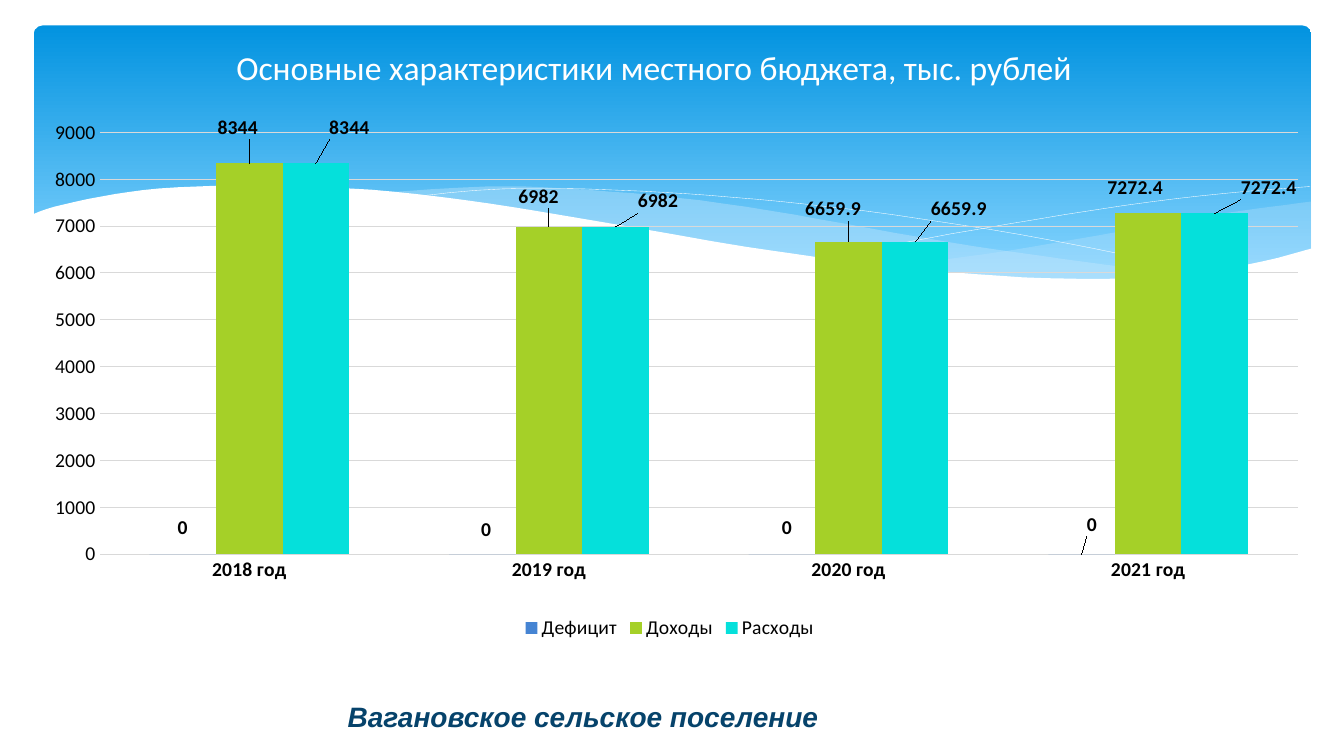
from lxml import etree
from pptx import Presentation
from pptx.chart.data import CategoryChartData
from pptx.dml.color import RGBColor
from pptx.enum.chart import XL_CHART_TYPE, XL_LABEL_POSITION, XL_LEGEND_POSITION, XL_TICK_MARK
from pptx.enum.shapes import MSO_SHAPE
from pptx.enum.text import MSO_ANCHOR, MSO_AUTO_SIZE, PP_ALIGN
from pptx.oxml.ns import qn
from pptx.util import Cm, Pt

COLUMN = XL_CHART_TYPE.COLUMN_CLUSTERED
OUTSIDE = XL_LABEL_POSITION.OUTSIDE_END
BOTTOM = XL_LEGEND_POSITION.BOTTOM
NO_TICK = XL_TICK_MARK.NONE
ROUNDED = MSO_SHAPE.ROUNDED_RECTANGLE
MIDDLE, TOP = MSO_ANCHOR.MIDDLE, MSO_ANCHOR.TOP
FIXED = MSO_AUTO_SIZE.NONE
CENTER, LEFT = PP_ALIGN.CENTER, PP_ALIGN.LEFT

COLORS = {
    "sky": "0293E0", "pale": "83D3FE", "mist": "C6E7FC", "white": "FFFFFF",
    "black": "000000", "navy": "06436B", "grid": "D9D9D9",
    "blue": "4584D3", "green": "A5D028", "cyan": "05E0DB",
}
YEARS = ["2018 год", "2019 год", "2020 год", "2021 год"]
FLOWS = [8344, 6982, 6659.9, 7272.4]
SERIES = [
    ("Дефицит", "blue", [0, 0, 0, 0], [(0, -1.8), (0.3, -1.5), (0.4, -1.8), (0.8, -2.5)]),
    ("Доходы", "green", FLOWS, [(-0.9, -3.5), (-0.8, -2.6), (-1.2, -3.1), (-1, -1.8)]),
    ("Расходы", "cyan", FLOWS, [(2.6, -3.5), (3.3, -1.8), (3.4, -3.1), (4.2, -1.8)]),
]

RIGHT_TOP = [(3304, 508), (3165, 526), (3018, 549), (2819, 584), (2553, 630), (2240, 673)]
RIGHT_LOW = [(2240, 673), (2433, 691), (2644, 704), (2827, 704), (3012, 691),
             (3167, 665), (3304, 627)]
MID_TOP = [(3023, 693), (2835, 673), (2626, 645), (2390, 610), (2131, 564),
           (1880, 521), (1656, 493), (1422, 475), (1224, 470), (970, 485)]
MID_LOW = [(970, 485), (1227, 516), (1521, 564), (1793, 610), (2037, 648),
           (2304, 681), (2535, 701), (2769, 706), (3023, 693)]
FALL = [(1046, 495), (1163, 483), (1311, 475), (1524, 478), (1727, 488),
        (1969, 508), (2250, 541), (2576, 592), (2814, 638), (3073, 691)]
RISE = [(2078, 653), (2276, 612), (2532, 566), (2832, 518), (3081, 488), (3302, 470)]
FRONT = [(3310, 625), (3185, 658), (3043, 683), (2835, 701), (2634, 701), (2398, 686),
         (2118, 655), (1880, 622), (1514, 559), (1234, 513), (991, 483), (777, 470),
         (597, 467), (401, 475), (257, 495), (137, 521), (79, 541)]
BASE = [(79, 836), (3310, 836)]


def rgb(name):
    """Return the named colour."""
    return RGBColor.from_string(COLORS[name])


def style(font, size=14, color="black", face="Calibri", bold=False, italic=False):
    """Format a font."""
    font.size, font.name, font.bold, font.italic = Pt(size), face, bold, italic
    font.color.rgb = rgb(color)


def write(frame, text, align=LEFT, anchor=TOP, wrap=True, **form):
    """Put formatted text in a frame."""
    frame.word_wrap, frame.vertical_anchor = wrap, anchor
    frame.auto_size = FIXED
    para = frame.paragraphs[0]
    para.alignment = align
    run = para.add_run()
    run.text = text
    style(run.font, **form)


def smooth(knots, steps=4):
    """Return points on a smooth curve through the knots."""
    ends = [knots[0], *knots, knots[-1]]
    curve = [knots[0]]
    for a, b, c, d in zip(ends, ends[1:], ends[2:], ends[3:]):
        for step in range(1, steps + 1):
            t = step / steps
            curve.append(tuple(
                (2 * q + (r - p) * t + (2 * p - 5 * q + 4 * r - s) * t ** 2
                 + (3 * q - p - 3 * r + s) * t ** 3) / 2
                for p, q, r, s in zip(a, b, c, d)))
    return curve


def wave(slide, points, fill=None, alpha=100):
    """Draw a filled wave, or a thin white line when no fill is given."""
    pen = slide.shapes.build_freeform(*points[0], scale=Cm(0.01))
    pen.add_line_segments(points[1:], close=bool(fill))
    shape = pen.convert_to_shape()
    shape.shadow.inherit = False
    if fill:
        shape.fill.solid()
        shape.fill.fore_color.rgb = rgb(fill)
        shape.line.fill.background()
        tint = shape.element.spPr.find(".//" + qn("a:srgbClr"))
        etree.SubElement(tint, qn("a:alpha"), val=str(alpha * 1000))
    else:
        shape.fill.background()
        shape.line.color.rgb = rgb("white")
        shape.line.width = Pt(0.25)


def banner(slide, box):
    """Draw the blue banner and its waves."""
    band = slide.shapes.add_shape(ROUNDED, *box)
    band.adjustments[0] = 0.034
    band.shadow.inherit = False
    band.line.fill.background()
    band.fill.gradient()
    band.fill.gradient_angle = 270
    for stop, name, spot in zip(band.fill.gradient_stops, ("sky", "pale"), (0, 0.9)):
        stop.color.rgb, stop.position = rgb(name), spot
    wave(slide, smooth(RIGHT_TOP) + smooth(RIGHT_LOW), "mist", 29)
    wave(slide, smooth(MID_TOP) + smooth(MID_LOW), "mist", 40)
    wave(slide, smooth(FALL))
    wave(slide, smooth(RISE))
    wave(slide, smooth(FRONT) + BASE, "white")


def heading(slide, box, text):
    """Place the title above the banner."""
    title = slide.shapes.title
    title.left, title.top, title.width, title.height = box
    write(title.text_frame, text, CENTER, MIDDLE, size=24, color="white")
    title.element.getparent().append(title.element)


def place(parent, index, **parts):
    """Insert a manual chart layout."""
    layout = etree.Element(qn("c:layout"))
    manual = etree.SubElement(layout, qn("c:manualLayout"))
    for name, value in parts.items():
        etree.SubElement(manual, qn("c:" + name), val=str(value))
    parent.insert(index, layout)


def budget(slide, box):
    """Draw the budget column chart."""
    data = CategoryChartData()
    data.categories = YEARS
    for name, _, values, _ in SERIES:
        data.add_series(name, values)
    chart = slide.shapes.add_chart(COLUMN, *box, data).chart
    style(chart.font)
    chart.has_title = False
    chart.has_legend = True
    chart.legend.position = BOTTOM
    chart.legend.include_in_layout = False
    style(chart.legend.font)
    for axis, bold in ((chart.category_axis, True), (chart.value_axis, False)):
        style(axis.tick_labels.font, bold=bold)
        axis.major_tick_mark = axis.minor_tick_mark = NO_TICK
        axis.format.line.fill.background()
    scale = chart.value_axis
    scale.minimum_scale, scale.maximum_scale, scale.major_unit = 0, 9000, 1000
    scale.major_gridlines.format.line.color.rgb = rgb("grid")
    scale.major_gridlines.format.line.width = Pt(0.75)

    plot = chart.plots[0]
    plot.gap_width, plot.overlap, plot.vary_by_categories = 150, 0, False
    for series, (_, color, _, shifts) in zip(plot.series, SERIES):
        series.format.fill.solid()
        series.format.fill.fore_color.rgb = rgb(color)
        for index in range(len(shifts)):
            label = series.points[index].data_label
            style(label.font, bold=True)
            label.position = OUTSIDE
    moves = [shift for row in SERIES for shift in row[3]]
    for label, (x, y) in zip(chart.element.iter(qn("c:dLbl")), moves):
        place(label, 1, x=x / 100, y=y / 100)

    area = chart.element.find(".//" + qn("c:plotArea"))
    for old in area.findall(qn("c:layout")):
        area.remove(old)
    place(area, 0, layoutTarget="inner", xMode="edge", yMode="edge",
          x=5.7 / 100, y=6.7 / 100, w=93.1 / 100, h=76.9 / 100)


def footer(slide, box, text):
    """Write the name of the settlement."""
    note = slide.shapes.add_textbox(*box)
    write(note.text_frame, text, wrap=False, size=20, color="navy",
          face="Arial", bold=True, italic=True)


def main():
    """Build and save the slide."""
    deck = Presentation()
    deck.slide_width, deck.slide_height = Cm(33.87), Cm(19.05)
    slide = deck.slides.add_slide(deck.slide_layouts[5])
    banner(slide, (Cm(0.85), Cm(0.64), Cm(32.2), Cm(6.86)))
    heading(slide, (Cm(3.15), Cm(0.48), Cm(26.67), Cm(2.44)),
            "Основные характеристики местного бюджета, тыс. рублей")
    footer(slide, (Cm(8.51), Cm(17.5), Cm(12.5), Cm(1.11)),
           "Вагановское сельское поселение")
    budget(slide, (Cm(0.66), Cm(2.41), Cm(32.44), Cm(13.82)))
    deck.save("out.pptx")


if __name__ == "__main__":
    main()
